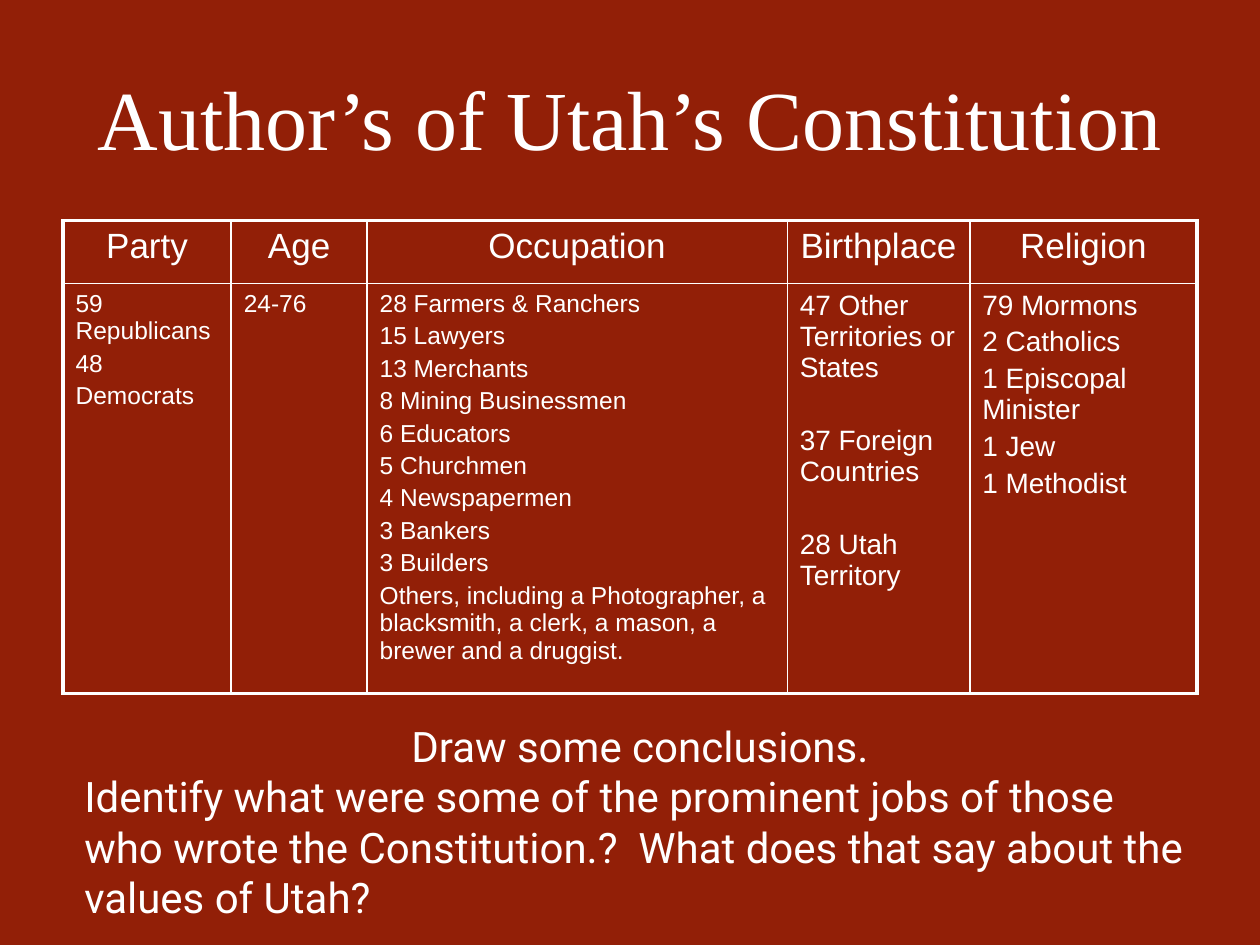
from lxml import etree
from pptx import Presentation
from pptx.dml.color import RGBColor
from pptx.enum.text import MSO_ANCHOR, PP_ALIGN
from pptx.oxml.ns import qn
from pptx.util import Cm, Pt

LEFT, CENTER = PP_ALIGN.LEFT, PP_ALIGN.CENTER
TOP, MIDDLE = MSO_ANCHOR.TOP, MSO_ANCHOR.MIDDLE

RED, WHITE = "921F07", "FFFFFF"
OUTER, INNER = 2.25, 1
GROUP_GAP = 24

COLUMN_WIDTHS = [3.39, 2.74, 8.47, 3.68, 4.58]
ROW_HEIGHTS = [1.27, 7.8]
HEADERS = ["Party", "Age", "Occupation", "Birthplace", "Religion"]
# Each column: text size, space between paragraphs, paragraphs
COLUMNS = [
    (14, 2.8, ["59 Republicans", "48", "Democrats"]),
    (14, 2.8, ["24-76"]),
    (14, 2.8, ["28 Farmers & Ranchers", "15 Lawyers", "13 Merchants",
               "8 Mining Businessmen", "6 Educators", "5 Churchmen",
               "4 Newspapermen", "3 Bankers", "3 Builders",
               "Others, including a Photographer, a blacksmith, a clerk, "
               "a mason, a brewer and a druggist."]),
    (16, GROUP_GAP, ["47 Other Territories or States",
                     "37 Foreign Countries", "28 Utah Territory"]),
    (16, 3.2, ["79 Mormons", "2 Catholics", "1 Episcopal Minister",
               "1 Jew", "1 Methodist"]),
]


def rgb(value):
    return RGBColor.from_string(value)


class SlideBuilder:
    def __init__(self, slide, color):
        self.s = slide
        self.color = color

    def background(self, color):
        fill = self.s.background.fill
        fill.solid()
        fill.fore_color.rgb = rgb(color)

    def paragraphs(self, tf, lines, font, size, gap=0):
        """Fill a text frame with (text, alignment) paragraphs."""
        for i, (text, align) in enumerate(lines):
            p = tf.add_paragraph() if i else tf.paragraphs[0]
            p.alignment = align
            p.space_before = Pt(gap if i else 0)
            r = p.add_run()
            r.text = text
            for name, value in {"name": font, "size": Pt(size)}.items():
                setattr(r.font, name, value)
            r.font.color.rgb = rgb(self.color)

    def text(self, box, lines, font, size, anchor=TOP):
        tf = self.s.shapes.add_textbox(*map(Cm, box)).text_frame
        tf.word_wrap = True
        tf.vertical_anchor = anchor
        self.paragraphs(tf, lines, font, size)

    def borders(self, cell, widths):
        """Draw cell borders from a dict of side letter to points."""
        tc_pr = cell._tc.get_or_add_tcPr()
        for side, width in widths.items():
            ln = etree.SubElement(tc_pr, qn(f"a:ln{side}"), w=str(Pt(width)))
            fill = etree.SubElement(ln, qn("a:solidFill"))
            etree.SubElement(fill, qn("a:srgbClr"), val=self.color)

    def table(self, left, top, widths, heights, headers, columns, font):
        rows, cols = len(heights), len(widths)
        box = map(Cm, (left, top, sum(widths), sum(heights)))
        table = self.s.shapes.add_table(rows, cols, *box).table
        table.first_row = table.horz_banding = False
        for row, height in zip(table.rows, heights):
            row.height = Cm(height)
        for j, (width, (size, gap, items)) in enumerate(zip(widths, columns)):
            table.columns[j].width = Cm(width)
            self.paragraphs(table.cell(0, j).text_frame,
                            [(headers[j], CENTER)], font, 20)
            self.paragraphs(table.cell(1, j).text_frame,
                            [(item, LEFT) for item in items], font, size, gap)
            for i in range(rows):
                cell = table.cell(i, j)
                edges = {"L": j == 0, "R": j == cols - 1,
                         "T": i == 0, "B": i == rows - 1}
                self.borders(cell, {side: OUTER if edge else INNER
                                    for side, edge in edges.items()})
                cell.fill.background()


def main():
    prs = Presentation()
    prs.slide_width, prs.slide_height = Cm(25.4), Cm(19.05)
    b = SlideBuilder(prs.slides.add_slide(prs.slide_layouts[6]), WHITE)
    b.background(RED)
    b.text((1.27, 0.76, 22.86, 3.18), [("Author’s of Utah’s Constitution", CENTER)],
           "Times New Roman", 48, MIDDLE)
    b.table(1.27, 4.45, COLUMN_WIDTHS, ROW_HEIGHTS, HEADERS, COLUMNS, "Arial")
    b.text((1.45, 14.4, 22.9, 4.32), [
        ("Draw some conclusions.", CENTER),
        ("Identify what were some of the prominent jobs of those who wrote the "
         "Constitution.?  What does that say about the values of Utah?", LEFT),
    ], "Roboto", 24)
    prs.save("out.pptx")


if __name__ == "__main__":
    main()
